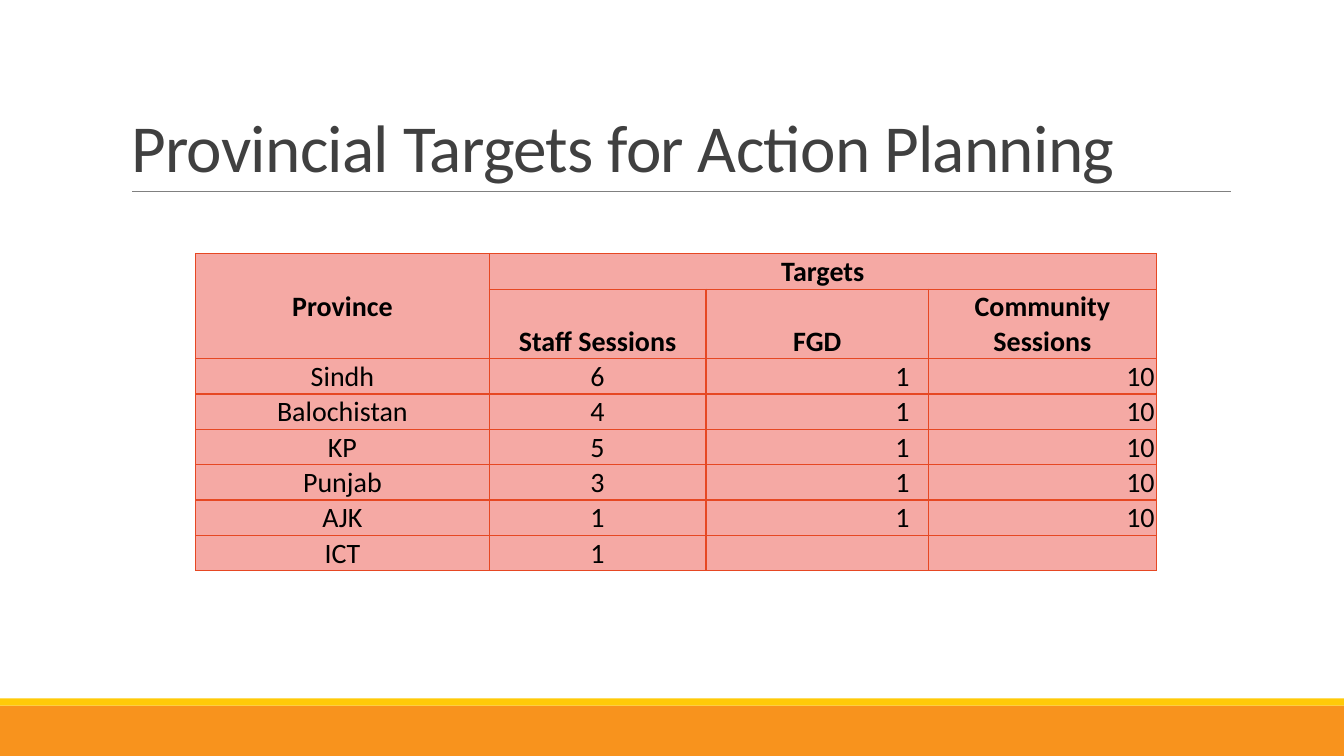
from pptx import Presentation
from pptx import util as u
from pptx.dml.color import RGBColor
from pptx.enum import shapes, text
from pptx.oxml import parse_xml
from pptx.oxml.ns import nsdecls

FONT = "Calibri"
CENTER, RIGHT = text.PP_ALIGN.CENTER, text.PP_ALIGN.RIGHT
MIDDLE, BOTTOM = text.MSO_ANCHOR.MIDDLE, text.MSO_ANCHOR.BOTTOM
TABLE_FILL, TABLE_BORDER = "F5A9A4", "E64823"
COLUMN_WIDTHS = [7.4, 5.46, 5.61, 5.74]
ROW_HEIGHTS = [0.9, 1.75] + [0.89] * 6
ROWS = [
    ["Province", "Targets", "", ""],
    ["", "Staff Sessions", "FGD", "Community Sessions"],
    ["Sindh", "6", "1", "10"],
    ["Balochistan", "4", "1", "10"],
    ["KP", "5", "1", "10"],
    ["Punjab", "3", "1", "10"],
    ["AJK", "1", "1", "10"],
    ["ICT", "1", "", ""],
]
HEADER_ROWS = 2
NUMBER_MARGINS = {2: 0.48, 3: 0.04}


def color(value):
    return RGBColor.from_string(value)


def add_run(paragraph, words, size, fill, bold=False):
    run = paragraph.add_run()
    run.text = words
    run.font.name = FONT
    run.font.size = u.Pt(size)
    run.font.bold = bold
    run.font.color.rgb = color(fill)
    return run


def add_band(slide, top, width, height, fill):
    band = slide.shapes.add_shape(
        shapes.MSO_SHAPE.RECTANGLE, 0, u.Cm(top), width, u.Cm(height))
    band.shadow.inherit = False
    band.fill.solid()
    band.fill.fore_color.rgb = color(fill)
    band.line.fill.background()


def add_rule(slide, left, right, top):
    rule = slide.shapes.add_connector(
        shapes.MSO_CONNECTOR.STRAIGHT, u.Cm(left), u.Cm(top), u.Cm(right), u.Cm(top))
    rule.line.color.rgb = color("808080")
    rule.line.width = u.Pt(0.5)
    rule._element.spPr.append(parse_xml(f"<a:effectLst {nsdecls('a')}/>"))


def format_title(slide, words):
    title = slide.shapes.title
    title.left, title.top = u.Cm(3.05), u.Cm(0.79)
    title.width, title.height = u.Cm(27.94), u.Cm(4.04)
    frame = title.text_frame
    frame.auto_size = text.MSO_AUTO_SIZE.NONE
    frame.vertical_anchor = BOTTOM
    paragraph = frame.paragraphs[0]
    paragraph.alignment = text.PP_ALIGN.LEFT
    paragraph.line_spacing = 0.85
    run = add_run(paragraph, words, 48, "404040")
    run.font._element.set("spc", "-50")


def format_cell(cell):
    properties = cell._tc.get_or_add_tcPr()
    for side in ("lnL", "lnR", "lnT", "lnB"):
        properties.append(parse_xml(
            f'<a:{side} {nsdecls("a")} w="12700"><a:solidFill>'
            f'<a:srgbClr val="{TABLE_BORDER}"/></a:solidFill></a:{side}>'))
    cell.fill.solid()
    cell.fill.fore_color.rgb = color(TABLE_FILL)
    cell.margin_left = cell.margin_right = cell.margin_top = u.Cm(0.02)
    cell.margin_bottom = 0
    cell.vertical_anchor = BOTTOM


def add_targets_table(slide):
    table = slide.shapes.add_table(
        len(ROWS), len(COLUMN_WIDTHS), u.Cm(4.93), u.Cm(6.39),
        u.Cm(sum(COLUMN_WIDTHS)), u.Cm(sum(ROW_HEIGHTS))).table
    for column, width in zip(table.columns, COLUMN_WIDTHS):
        column.width = u.Cm(width)
    for row, height in zip(table.rows, ROW_HEIGHTS):
        row.height = u.Cm(height)
    for row_index, values in enumerate(ROWS):
        is_header = row_index < HEADER_ROWS
        for column_index, value in enumerate(values):
            cell = table.cell(row_index, column_index)
            format_cell(cell)
            if not value:
                continue
            paragraph = cell.text_frame.paragraphs[0]
            paragraph.alignment = CENTER
            if not is_header and column_index in NUMBER_MARGINS:
                paragraph.alignment = RIGHT
                cell.margin_right = u.Cm(NUMBER_MARGINS[column_index])
            add_run(paragraph, value, 20, "000000", is_header)
    province = table.cell(0, 0)
    province.merge(table.cell(1, 0))
    province.vertical_anchor = MIDDLE
    table.cell(0, 1).merge(table.cell(0, 3))


def main():
    presentation = Presentation()
    presentation.slide_width = u.Cm(33.87)
    presentation.slide_height = u.Cm(19.05)
    slide = presentation.slides.add_slide(presentation.slide_layouts[5])
    add_band(slide, 17.78, presentation.slide_width, 1.27, "F8931D")
    add_band(slide, 17.6, presentation.slide_width, 0.18, "FFCA08")
    add_rule(slide, 3.33, 31.01, 4.83)
    format_title(slide, "Provincial Targets for Action Planning")
    add_targets_table(slide)
    presentation.save("out.pptx")


if __name__ == "__main__":
    main()
